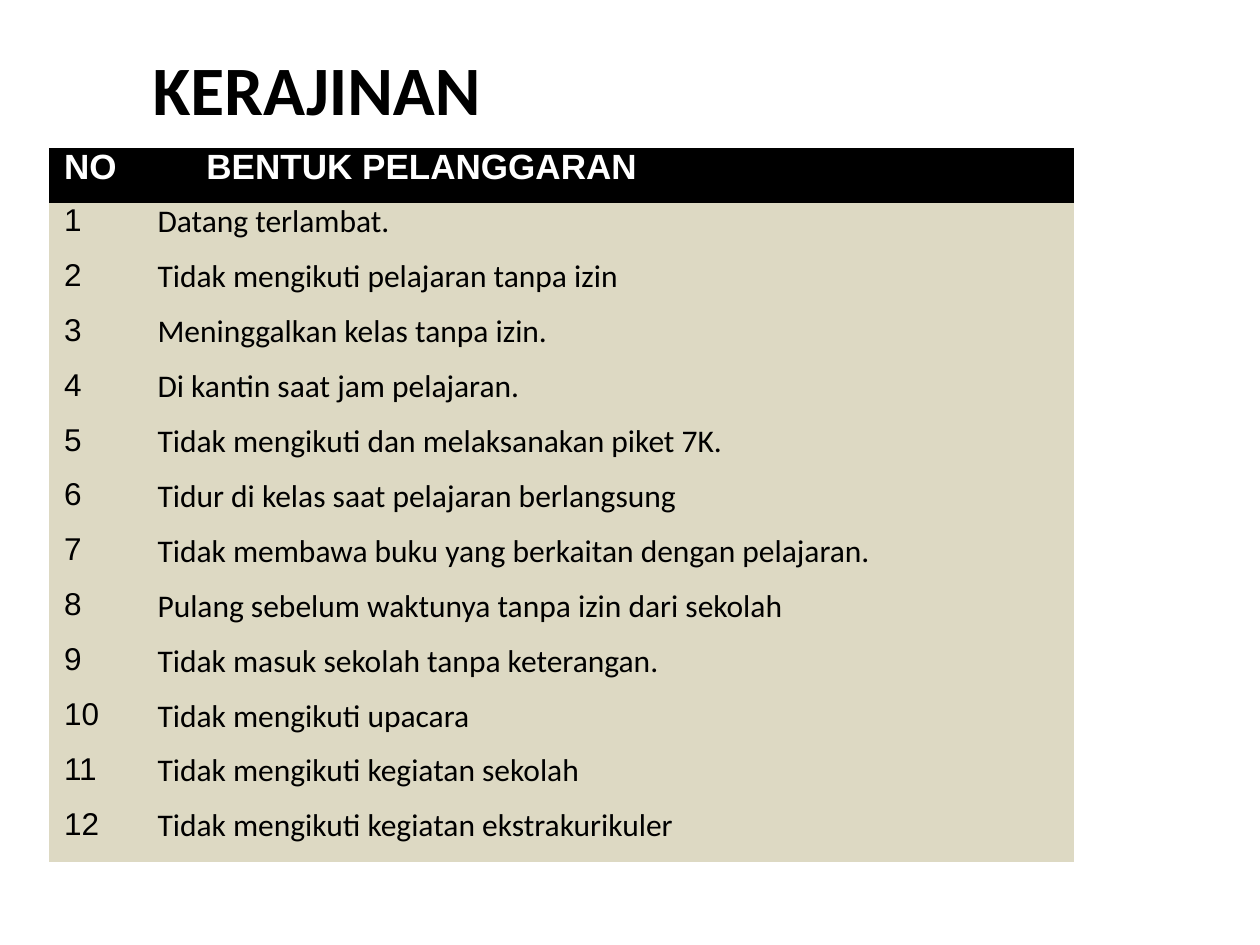
from pptx import Presentation
from pptx.dml.color import RGBColor
from pptx.enum.text import MSO_ANCHOR, MSO_AUTO_SIZE, PP_ALIGN
from pptx.util import Pt

TITLE = "KERAJINAN"
HEADER = ("NO", "BENTUK PELANGGARAN")
VIOLATIONS = [
    "Datang terlambat.",
    "Tidak mengikuti pelajaran tanpa izin",
    "Meninggalkan kelas tanpa izin.",
    "Di kantin saat jam pelajaran.",
    "Tidak mengikuti dan melaksanakan piket 7K.",
    "Tidur di kelas saat pelajaran berlangsung",
    "Tidak membawa buku yang berkaitan dengan pelajaran.",
    "Pulang sebelum waktunya tanpa izin dari sekolah",
    "Tidak masuk sekolah tanpa keterangan.",
    "Tidak mengikuti upacara",
    "Tidak mengikuti kegiatan sekolah",
    "Tidak mengikuti kegiatan ekstrakurikuler",
]

BLACK = RGBColor(0x00, 0x00, 0x00)
WHITE = RGBColor(0xFF, 0xFF, 0xFF)
BEIGE = RGBColor(0xDD, 0xD9, 0xC3)
PLAIN_TABLE_STYLE = "{2D5ABB26-0587-4C30-8999-92F81FD0307C}"

TABLE_LEFT, TABLE_TOP = 28, 84.5
COLUMN_WIDTHS = (62, 523.5)
ROW_HEIGHT = 31.4
NUMBER_INDENT, HEADING_INDENT = 8.6, 28


def write_text(frame, text, font="Calibri", size=18, color=BLACK, bold=False,
               align=PP_ALIGN.LEFT, anchor=MSO_ANCHOR.TOP, indent=0):
    frame.word_wrap = True
    frame.margin_left = Pt(indent)
    frame.margin_right = frame.margin_top = frame.margin_bottom = 0
    frame.vertical_anchor = anchor
    paragraph = frame.paragraphs[0]
    paragraph.alignment = align
    run = paragraph.add_run()
    run.text = text
    run.font.name = font
    run.font.size = Pt(size)
    run.font.bold = bold
    run.font.color.rgb = color


def fill_cell(cell, text, fill, indent=0, **text_format):
    cell.fill.solid()
    cell.fill.fore_color.rgb = fill
    write_text(cell.text_frame, text, **text_format)
    cell.margin_left = Pt(indent)
    cell.margin_right = cell.margin_top = cell.margin_bottom = 0
    cell.vertical_anchor = MSO_ANCHOR.TOP


def add_title(slide):
    title = slide.shapes.title
    title.left, title.top, title.width, title.height = Pt(36), Pt(21.6), Pt(290), Pt(57)
    title.text_frame.auto_size = MSO_AUTO_SIZE.NONE
    write_text(title.text_frame, TITLE, size=39.6, bold=True,
               align=PP_ALIGN.CENTER, anchor=MSO_ANCHOR.MIDDLE)


def add_violation_table(slide):
    row_count = len(VIOLATIONS) + 1
    table = slide.shapes.add_table(
        row_count, len(HEADER), Pt(TABLE_LEFT), Pt(TABLE_TOP),
        Pt(sum(COLUMN_WIDTHS)), Pt(row_count * ROW_HEIGHT)).table
    table.horz_banding = False
    table._tbl.tblPr[0].text = PLAIN_TABLE_STYLE
    for column, width in zip(table.columns, COLUMN_WIDTHS):
        column.width = Pt(width)
    for row in table.rows:
        row.height = Pt(ROW_HEIGHT)

    for column, (text, indent) in enumerate(zip(HEADER, (NUMBER_INDENT, HEADING_INDENT))):
        fill_cell(table.cell(0, column), text, BLACK, indent,
                  font="Arial", size=20, color=WHITE, bold=True)
    for number, violation in enumerate(VIOLATIONS, start=1):
        fill_cell(table.cell(number, 0), str(number), BEIGE, NUMBER_INDENT, font="Arial")
        fill_cell(table.cell(number, 1), violation, BEIGE)


def main():
    presentation = Presentation()
    presentation.slide_width, presentation.slide_height = Pt(720), Pt(540)
    slide = presentation.slides.add_slide(presentation.slide_layouts.get_by_name("Title Only"))
    add_title(slide)
    add_violation_table(slide)
    presentation.save("out.pptx")


if __name__ == "__main__":
    main()
